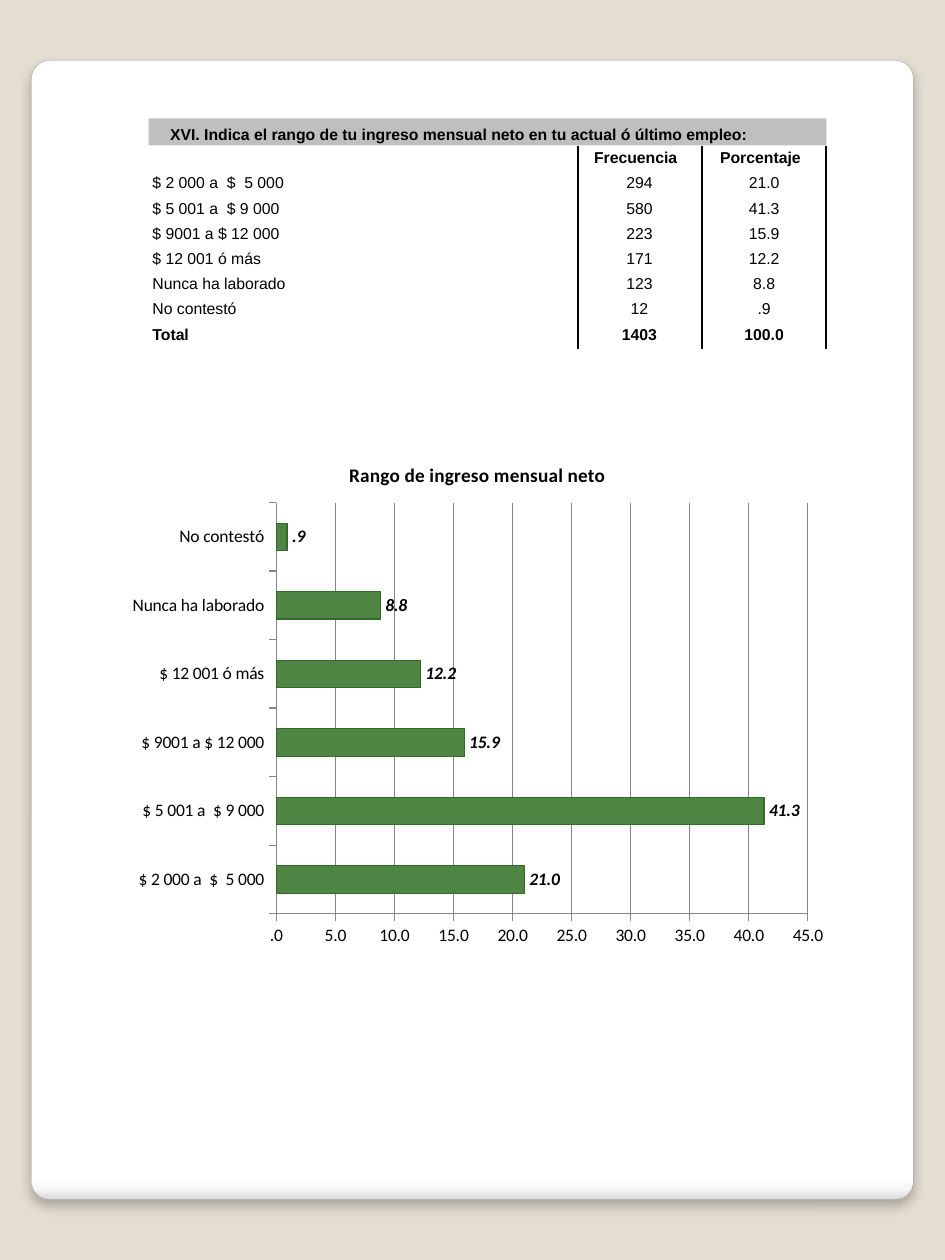
import copy

import pptx
import pptx.chart.data
import pptx.dml.color
import pptx.enum.chart
import pptx.enum.shapes
import pptx.enum.text
import pptx.oxml
import pptx.oxml.ns
import pptx.util

RGB = pptx.dml.color.RGBColor
PAPER = RGB(0xE3, 0xDE, 0xD1)
WHITE = RGB(0xFF, 0xFF, 0xFF)
CARD_EDGE = RGB(0xA4, 0xA4, 0xA4)
BAND = RGB(0xBF, 0xBF, 0xBF)
BLACK = RGB(0, 0, 0)
BAR = RGB(0x4E, 0x85, 0x42)
BAR_EDGE = RGB(0x32, 0x6B, 0x28)
GRID = RGB(0x86, 0x86, 0x86)
NO_GRID_STYLE = "{2D5ABB26-0587-4C30-8999-92F81FD0307C}"
NS = pptx.oxml.ns.nsdecls("a")
Align = pptx.enum.text.PP_ALIGN
Anchor = pptx.enum.text.MSO_ANCHOR

QUESTION = "XVI. Indica el rango de tu ingreso mensual neto en tu actual ó último empleo:"
CHART_TITLE = "Rango de ingreso mensual neto"
INCOME = [
    ("$ 2 000 a  $  5 000", 294, 21.0),
    ("$ 5 001 a  $ 9 000", 580, 41.3),
    ("$ 9001 a $ 12 000", 223, 15.9),
    ("$ 12 001 ó más", 171, 12.2),
    ("Nunca ha laborado", 123, 8.8),
    ("No contestó", 12, 0.9),
]


def cells(count):
    """Length of so many squares of a grid of 75 columns by 100 rows."""
    return pptx.util.Inches(count / 10)


def style(font, size, name, bold=False, italic=False):
    font.size, font.name = pptx.util.Pt(size), name
    font.bold, font.italic = bold, italic
    font.color.rgb = BLACK


deck = pptx.Presentation()
deck.slide_width, deck.slide_height = cells(75), cells(100)
slide = deck.slides.add_slide(deck.slide_layouts[6])
slide.background.fill.solid()
slide.background.fill.fore_color.rgb = PAPER

# White card with a shaded lower edge and a soft shadow
card = slide.shapes.add_shape(
    pptx.enum.shapes.MSO_SHAPE.ROUNDED_RECTANGLE,
    cells(2.5), cells(4.8), cells(70), cells(90.4))
card.adjustments[0] = 0.021
card.line.color.rgb = CARD_EDGE
card.line.width = pptx.util.Pt(0.16)
card.fill.gradient()
card.fill.gradient_angle = 270
stop_list = card.fill._fill._gradFill.gsLst
for _ in range(2):
    stop_list.append(copy.deepcopy(stop_list[0]))
shades = [(0, WHITE), (0.98, WHITE), (0.99, RGB(0xF7, 0xF7, 0xF7)), (1, RGB(0xDA, 0xDA, 0xDA))]
for stop, (position, shade) in zip(card.fill.gradient_stops, shades):
    stop.position, stop.color.rgb = position, shade
card.shadow.inherit = False
card_effects = card._element.spPr.find(pptx.oxml.ns.qn("a:effectLst"))
card_effects.append(pptx.oxml.parse_xml(
    f'<a:outerShdw {NS} blurRad="76200" dist="50800" dir="5400000" rotWithShape="0">'
    '<a:srgbClr val="000000"><a:alpha val="25000"/></a:srgbClr></a:outerShdw>'))

# Grey band behind the question
band = slide.shapes.add_shape(
    pptx.enum.shapes.MSO_SHAPE.RECTANGLE, cells(11.8), cells(9.4), cells(53.8), cells(2.15))
band.shadow.inherit = False
band.fill.solid()
band.fill.fore_color.rgb = BAND
band.line.fill.background()

# Frequency table: question, headings, income ranges and total
rows = [(QUESTION, "", ""), ("", "Frecuencia", "Porcentaje")]
rows += [(label, str(count), f"{share:.1f}".lstrip("0")) for label, count, share in INCOME]
rows.append(("Total", "1403", "100.0"))
bold_rows = (0, 1, len(rows) - 1)

frequencies = slide.shapes.add_table(
    len(rows), 3, cells(11.8), cells(9.4), cells(53.8), cells(18.2)).table
frequencies.first_row = frequencies.horz_banding = False
frequencies._tbl.tblPr.find(pptx.oxml.ns.qn("a:tableStyleId")).text = NO_GRID_STYLE
for column, width in zip(frequencies.columns, (34, 9.9, 9.9)):
    column.width = cells(width)
for r, values in enumerate(rows):
    frequencies.rows[r].height = cells(2.2 if r == 0 else 2)
    for c, value in enumerate(values):
        cell = frequencies.cell(r, c)
        cell.margin_top = 0
        cell.margin_bottom = cells(0.15 if r == 0 else 0.1)
        cell.margin_right = cells(0.6 if r == 1 else 0)
        cell.margin_left = cells(1.7 if r == 0 else 0.3 if c == 0 else 0)
        cell.vertical_anchor = Anchor.BOTTOM if r == 0 else Anchor.MIDDLE
        cell.text = value
        paragraph = cell.text_frame.paragraphs[0]
        paragraph.alignment = Align.CENTER if c else Align.LEFT
        style(paragraph.font, 9, "Arial", bold=r in bold_rows)
        cell.fill.background()
frequencies.cell(0, 0).merge(frequencies.cell(0, 2))

# Vertical rules on both sides of the figures
for step in range(3):
    x = cells(45.85 + 9.85 * step)
    rule = slide.shapes.add_connector(
        pptx.enum.shapes.MSO_CONNECTOR.STRAIGHT, x, cells(11.6), x, cells(27.7))
    rule.line.color.rgb = BLACK
    rule.line.width = pptx.util.Pt(1.25)
    rule._element.spPr.append(pptx.oxml.parse_xml(f"<a:effectLst {NS}/>"))

# Bar chart of the percentages
percentages = pptx.chart.data.CategoryChartData(number_format="####.0")
percentages.categories = [label for label, _, _ in INCOME]
percentages.add_series(CHART_TITLE, [share for _, _, share in INCOME])
chart = slide.shapes.add_chart(
    pptx.enum.chart.XL_CHART_TYPE.BAR_CLUSTERED,
    cells(9.4), cells(35), cells(57), cells(40.8), percentages).chart
style(chart.font, 10, "Calibri")
chart.has_legend = False
chart.has_title = True
chart.chart_title.text_frame.text = CHART_TITLE
style(chart.chart_title.text_frame.paragraphs[0].font, 11, "Calibri", bold=True)
chart.chart_title.include_in_layout = False

bars = chart.plots[0]
bars.gap_width = 150
bars.vary_by_categories = False
income_bars = bars.series[0]
income_bars.format.fill.solid()
income_bars.format.fill.fore_color.rgb = BAR
income_bars.format.line.color.rgb = BAR_EDGE
income_bars.format.line.width = pptx.util.Pt(0.75)
labels = income_bars.data_labels
labels.show_value = True
labels.number_format, labels.number_format_is_linked = "####.0", False
labels.position = pptx.enum.chart.XL_LABEL_POSITION.OUTSIDE_END
style(labels.font, 10, "Calibri", bold=True, italic=True)

for axis in (chart.category_axis, chart.value_axis):
    axis.major_tick_mark = pptx.enum.chart.XL_TICK_MARK.OUTSIDE
    axis.format.line.color.rgb = GRID
    axis.format.line.width = pptx.util.Pt(0.75)
    style(axis.tick_labels.font, 10, "Calibri")
scale = chart.value_axis
scale.minimum_scale, scale.maximum_scale, scale.major_unit = 0, 45, 5
scale.tick_labels.number_format = "####.0"
scale.tick_labels.number_format_is_linked = False
scale.has_major_gridlines = True
scale.major_gridlines.format.line.color.rgb = GRID
scale.major_gridlines.format.line.width = pptx.util.Pt(0.75)

# Plot area as shares of the chart
plot_area = chart._chartSpace.chart.plotArea
for old_layout in plot_area.findall(pptx.oxml.ns.qn("c:layout")):
    plot_area.remove(old_layout)
shares = "".join(f'<c:{key} val="{share}"/>' for key, share in
                 (("x", 0.22), ("y", 0.12), ("w", 0.74), ("h", 0.8)))
plot_area.insert(0, pptx.oxml.parse_xml(
    f'<c:layout {pptx.oxml.ns.nsdecls("c")}><c:manualLayout><c:layoutTarget val="inner"/>'
    f'<c:xMode val="edge"/><c:yMode val="edge"/>{shares}</c:manualLayout></c:layout>'))

deck.save("out.pptx")
